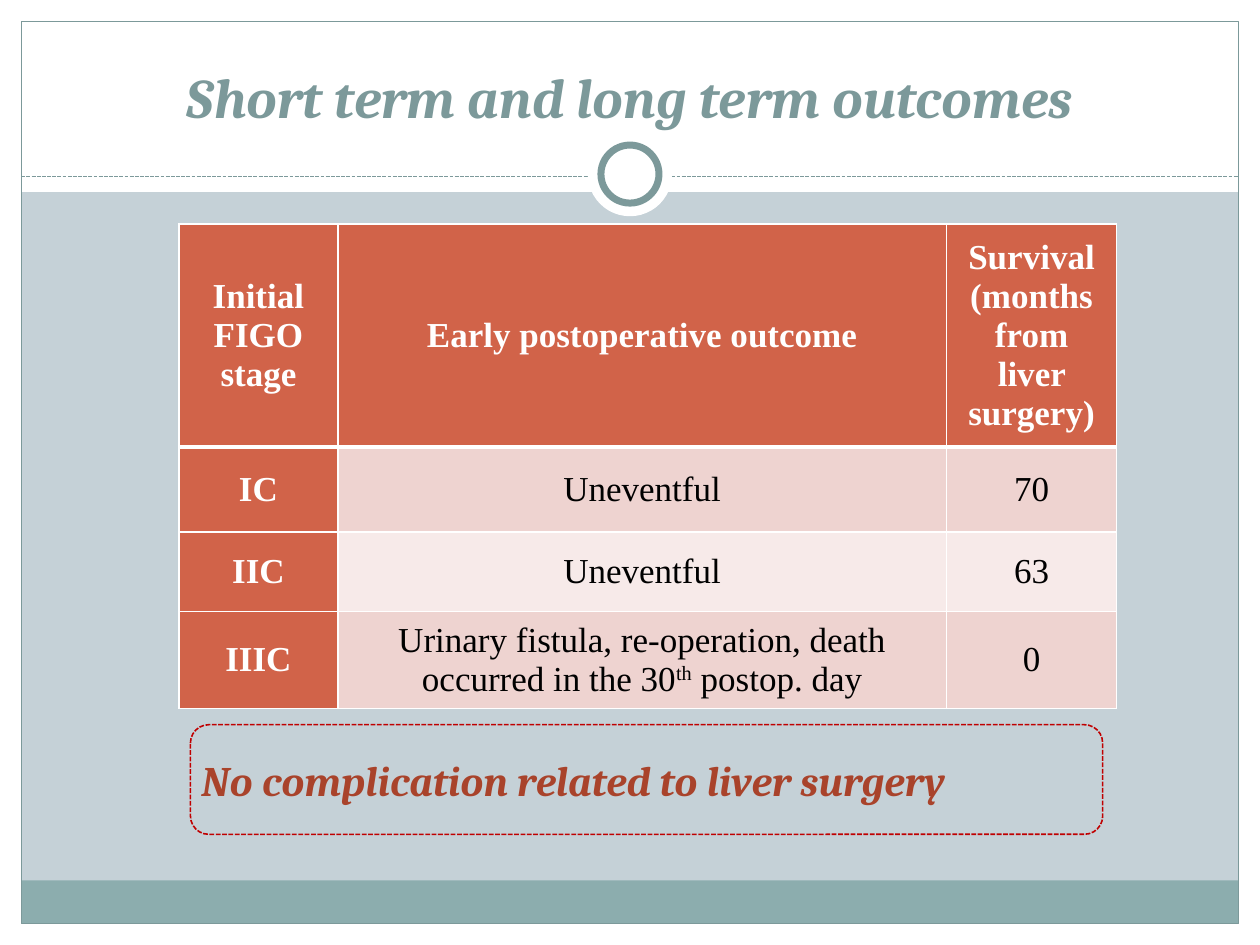
from dataclasses import dataclass

from lxml import etree
from pptx import Presentation
from pptx.dml.color import RGBColor
from pptx.enum.dml import MSO_LINE
from pptx.enum.shapes import MSO_CONNECTOR, MSO_SHAPE
from pptx.enum.text import MSO_ANCHOR, PP_ALIGN
from pptx.oxml.ns import qn
from pptx.util import Cm, Pt

RECTANGLE, ELLIPSE = MSO_SHAPE.RECTANGLE, MSO_SHAPE.OVAL
ROUNDED = MSO_SHAPE.ROUNDED_RECTANGLE
STRAIGHT = MSO_CONNECTOR.STRAIGHT
DASH = MSO_LINE.SQUARE_DOT
CENTER, LEFT = PP_ALIGN.CENTER, PP_ALIGN.LEFT
MIDDLE, BOTTOM, TOP = MSO_ANCHOR.MIDDLE, MSO_ANCHOR.BOTTOM, MSO_ANCHOR.TOP


@dataclass(frozen=True)
class Theme:
    """Colours, fonts and type sizes of the slide."""
    background: str = "C5D1D7"
    white: str = "FFFFFF"
    black: str = "000000"
    frame: str = "7C999A"
    footer: str = "8CADAE"
    header: str = "D16349"
    bands: tuple = ("EED3D0", "F7EAE9")
    note: str = "A9432B"
    note_border: str = "C00000"
    heading_font: str = "Cambria"
    table_font: str = "Times New Roman"
    title_size: int = 32
    note_size: int = 24
    table_size: int = 20


THEME = Theme()
WIDTH, HEIGHT = 25.4, 19.05
MARGIN = 0.43
HEADERS = ("Initial FIGO stage", "Early postoperative outcome",
           "Survival (months from liver surgery)")
OUTCOMES = (
    ("IC", "Uneventful", "70"),
    ("IIC", "Uneventful", "63"),
    ("IIIC", ("Urinary fistula, re-operation, death occurred in the 30",
              "th", " postop. day"), "0"),
)
COLUMN_WIDTHS = (3.2, 12.27, 3.43)
ROW_HEIGHTS = (4.48, 1.71, 1.61, 1.95)


def color(value):
    """Turn a hex string into a colour."""
    return RGBColor.from_string(value)


def add_panel(slide, kind, box, fill=None, line=None, width=0.75):
    """Add a flat preset shape in the given box."""
    shape = slide.shapes.add_shape(kind, *map(Cm, box))
    shape.shadow.inherit = False
    if fill:
        shape.fill.solid()
        shape.fill.fore_color.rgb = color(fill)
    else:
        shape.fill.background()
    if line:
        shape.line.color.rgb = color(line)
        shape.line.width = Pt(width)
    else:
        shape.line.fill.background()
    return shape


def style_run(run, font, size, ink, bold=False, italic=False):
    """Format one run of text."""
    run.font.name = font
    run.font.size = Pt(size)
    run.font.color.rgb = color(ink)
    run.font.bold = bold
    run.font.italic = italic


def add_heading(slide, box, text, size, ink, align, anchor):
    """Add a bold italic line of heading text."""
    frame = slide.shapes.add_textbox(*map(Cm, box)).text_frame
    frame.word_wrap = True
    frame.vertical_anchor = anchor
    frame.text = text
    paragraph = frame.paragraphs[0]
    paragraph.alignment = align
    style_run(paragraph.runs[0], THEME.heading_font, size, ink, True, True)


def add_frame(slide, box):
    """Draw the white margins, footer band and outline of the page."""
    left, top, width, height = box
    inner_width, inner_height = width - 2 * MARGIN, height - 2 * MARGIN
    base = top + height - MARGIN
    for margin in ((left, base, width, MARGIN),
                   (left, top, width, 3.87),
                   (left, top, MARGIN, height),
                   (left + width - MARGIN, top, MARGIN, height)):
        add_panel(slide, RECTANGLE, margin, THEME.white)
    add_panel(slide, RECTANGLE,
              (left + MARGIN, base - 0.87, inner_width, 0.87), THEME.footer)
    add_panel(slide, RECTANGLE,
              (left + MARGIN, top + MARGIN, inner_width, inner_height),
              line=THEME.frame)


def add_divider(slide, box):
    """Draw the dashed rule with the ring at its middle."""
    left, top, width, height = box
    middle = top + height / 2
    rule = slide.shapes.add_connector(
        STRAIGHT, Cm(left), Cm(middle), Cm(left + width), Cm(middle))
    rule.line.color.rgb = color(THEME.frame)
    rule.line.width = Pt(0.75)
    rule.line.dash_style = DASH
    etree.SubElement(rule._element.spPr, qn("a:effectLst"))
    center = left + width / 2
    for diameter, line in ((height, None), (1.17, THEME.frame)):
        ring = (center - diameter / 2, middle - 0.05 - diameter / 2,
                diameter, diameter)
        add_panel(slide, ELLIPSE, ring, THEME.white, line, 4)


def set_borders(cell, **widths):
    """Give a cell white borders, one point wide unless stated."""
    properties = cell._tc.get_or_add_tcPr()
    for side in "LRTB":
        line = etree.SubElement(properties, qn(f"a:ln{side}"),
                                w=str(Pt(widths.get(side, 1))))
        fill = etree.SubElement(line, qn("a:solidFill"))
        etree.SubElement(fill, qn("a:srgbClr"), val=THEME.white)


def fill_cell(cell, content, fill, is_heading):
    """Write and colour a cell; the second part of a tuple is raised."""
    cell.fill.solid()
    cell.fill.fore_color.rgb = color(fill)
    cell.vertical_anchor = MIDDLE
    paragraph = cell.text_frame.paragraphs[0]
    paragraph.alignment = CENTER
    parts = (content,) if isinstance(content, str) else content
    for index, part in enumerate(parts):
        run = paragraph.add_run()
        run.text = part
        style_run(run, THEME.table_font, THEME.table_size,
                  THEME.white if is_heading else THEME.black, is_heading)
        if index == 1:
            run._r.get_or_add_rPr().set("baseline", "30000")


def add_outcome_table(slide, box):
    """Add the table of outcomes by initial stage."""
    rows = (HEADERS, *OUTCOMES)
    table = slide.shapes.add_table(
        len(rows), len(HEADERS), *map(Cm, box)).table
    for column, width in zip(table.columns, COLUMN_WIDTHS):
        column.width = Cm(width)
    for row, height in zip(table.rows, ROW_HEIGHTS):
        row.height = Cm(height)
    for r, contents in enumerate(rows):
        for c, content in enumerate(contents):
            cell = table.cell(r, c)
            is_heading = r == 0 or c == 0
            fill = THEME.header if is_heading else THEME.bands[(r - 1) % 2]
            set_borders(cell, B=3 if r == 0 else 1, T=3 if r == 1 else 1)
            fill_cell(cell, content, fill, is_heading)


def add_note(slide, box):
    """Add the conclusion inside a dashed rounded outline."""
    left, top, width, height = box
    add_heading(slide, (left - 0.03, top + 0.48, width + 1, 1.27),
                "No complication related to liver surgery",
                THEME.note_size, THEME.note, LEFT, TOP)
    outline = add_panel(slide, ROUNDED, box, line=THEME.note_border, width=0.9)
    outline.line.dash_style = DASH


def main():
    """Build and save the presentation."""
    presentation = Presentation()
    presentation.slide_width, presentation.slide_height = Cm(WIDTH), Cm(HEIGHT)
    slide = presentation.slides.add_slide(presentation.slide_layouts[6])
    slide.background.fill.solid()
    slide.background.fill.fore_color.rgb = color(THEME.background)
    add_frame(slide, (0, 0, WIDTH, HEIGHT))
    add_divider(slide, (MARGIN, 2.71, WIDTH - 2 * MARGIN, 1.7))
    add_heading(slide, (0.85, 0.64, 23.7, 2.1),
                "Short term and long term outcomes",
                THEME.title_size, THEME.frame, CENTER, BOTTOM)
    add_outcome_table(slide, (3.61, 4.52, sum(COLUMN_WIDTHS), sum(ROW_HEIGHTS)))
    add_note(slide, (3.84, 14.61, 18.39, 2.21))
    presentation.save("out.pptx")


if __name__ == "__main__":
    main()
